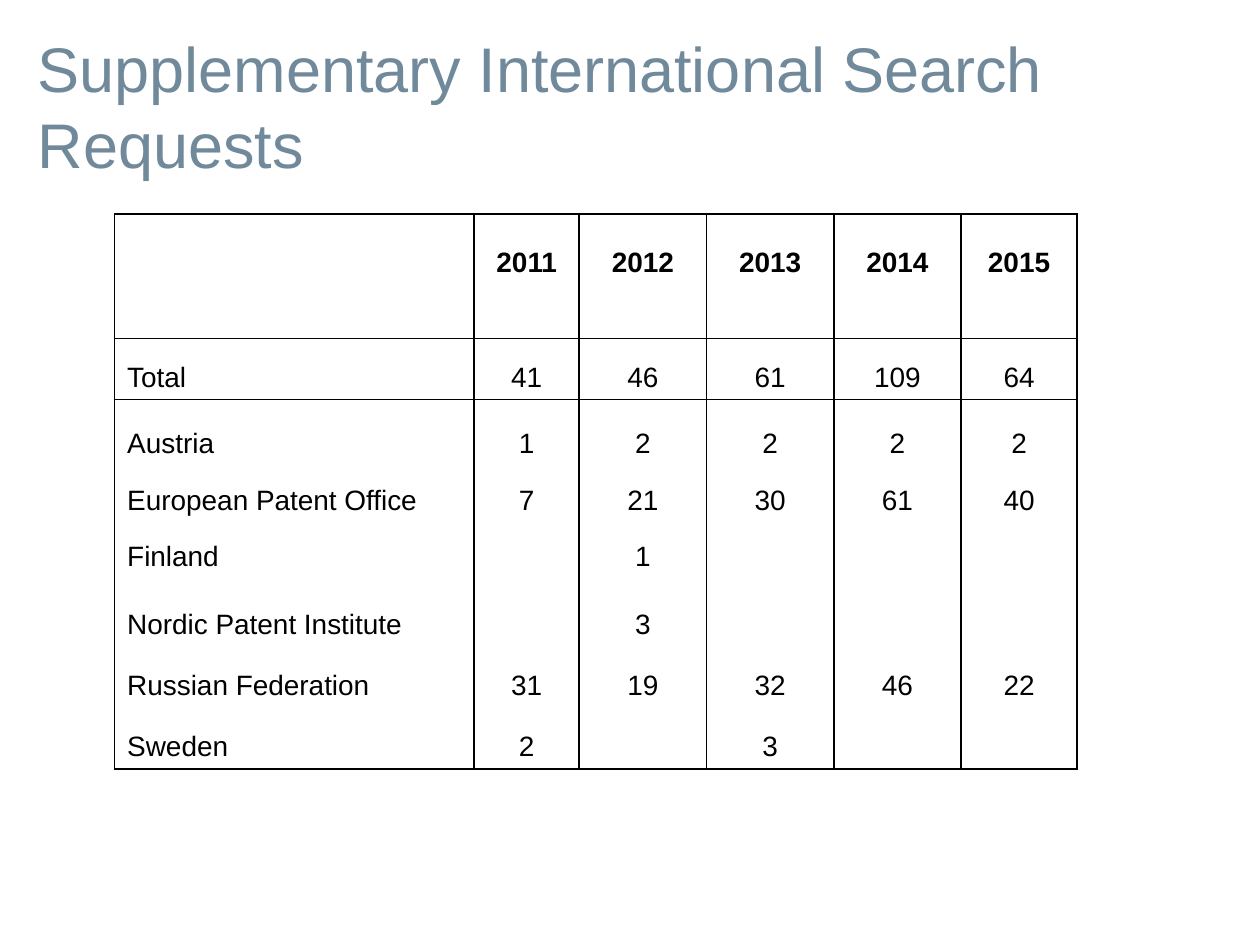
from lxml import etree
from pptx import Presentation
from pptx.dml.color import RGBColor
from pptx.enum.text import MSO_ANCHOR, PP_ALIGN
from pptx.oxml.ns import qn
from pptx.util import Pt

BLACK = RGBColor(0x00, 0x00, 0x00)
SLATE = RGBColor(0x70, 0x89, 0x9B)
MIDDLE, BOTTOM = MSO_ANCHOR.MIDDLE, MSO_ANCHOR.BOTTOM
LEFT, CENTER = PP_ALIGN.LEFT, PP_ALIGN.CENTER

TITLE_FORMAT = {"name": "Arial", "size": Pt(36), "bold": False}
CELL_FORMAT = {"name": "Arial", "size": Pt(16), "bold": False}
HEADER_FORMAT = {**CELL_FORMAT, "bold": True}

# The header takes two rows; its years stand in the upper one
REQUESTS = [
    ["", "2011", "2012", "2013", "2014", "2015"],
    [""] * 6,
    ["Total", "41", "46", "61", "109", "64"],
    ["Austria", "1", "2", "2", "2", "2"],
    ["European Patent Office", "7", "21", "30", "61", "40"],
    ["Finland", "", "1", "", "", ""],
    ["Nordic Patent Institute", "", "3", "", "", ""],
    ["Russian Federation", "31", "19", "32", "46", "22"],
    ["Sweden", "2", "", "3", "", ""],
]
COLUMN_WIDTHS = [205.5, 60, 72.75, 72.75, 72.75, 66.25]
ROW_HEIGHTS = [40.5, 30.5, 35, 38, 32.25, 32.25, 38.75, 35, 35]
RULED_ROW_EDGES = {0, 2, 3, 9}


class SlideBuilder:
    def __init__(self, slide, line_width=Pt(1), line_color=BLACK):
        self.slide = slide
        self.line_width = line_width
        self.line_color = line_color

    def set_text(self, paragraph, text, text_format, color, align):
        paragraph.text = text
        paragraph.alignment = align
        for attribute, value in text_format.items():
            setattr(paragraph.font, attribute, value)
        paragraph.font.color.rgb = color

    def title(self, text, left, top, width, height):
        frame = self.slide.shapes.add_textbox(
            Pt(left), Pt(top), Pt(width), Pt(height)).text_frame
        frame.word_wrap = True
        frame.vertical_anchor = MIDDLE
        self.set_text(frame.paragraphs[0], text, TITLE_FORMAT, SLATE, LEFT)

    def borders(self, cell, sides):
        properties = cell._tc.get_or_add_tcPr()
        for side in "LRTB":
            line = etree.SubElement(properties, qn(f"a:ln{side}"), w=str(self.line_width))
            if side in sides:
                fill = etree.SubElement(line, qn("a:solidFill"))
                etree.SubElement(fill, qn("a:srgbClr"), val=str(self.line_color))
            else:
                etree.SubElement(line, qn("a:noFill"))

    def table(self, rows, left, top, widths, heights, ruled_edges):
        table = self.slide.shapes.add_table(
            len(rows), len(widths), Pt(left), Pt(top),
            Pt(sum(widths)), Pt(sum(heights))).table
        table.first_row = table.horz_banding = False
        for column, width in zip(table.columns, widths):
            column.width = Pt(width)
        for row, height in zip(table.rows, heights):
            row.height = Pt(height)
        table.cell(0, 0).merge(table.cell(1, 0))

        for r, row in enumerate(rows):
            for c, text in enumerate(row):
                cell = table.cell(r, c)
                last_row = r + cell.span_height if cell.is_merge_origin else r + 1
                sides = "LR" + "T" * (r in ruled_edges) + "B" * (last_row in ruled_edges)
                self.borders(cell, sides)
                cell.fill.background()
                cell.vertical_anchor = BOTTOM
                self.set_text(cell.text_frame.paragraphs[0], text,
                              HEADER_FORMAT if r == 0 else CELL_FORMAT,
                              BLACK, CENTER if c else LEFT)


def main():
    presentation = Presentation()
    presentation.slide_width, presentation.slide_height = Pt(720), Pt(540)
    builder = SlideBuilder(presentation.slides.add_slide(presentation.slide_layouts[6]))

    # Title
    builder.title("Supplementary International Search Requests", 14.4, 15.1, 714, 90)

    # Requests by authority and year
    builder.table(REQUESTS, 65.5, 122.4, COLUMN_WIDTHS, ROW_HEIGHTS, RULED_ROW_EDGES)

    presentation.save("out.pptx")


if __name__ == "__main__":
    main()
